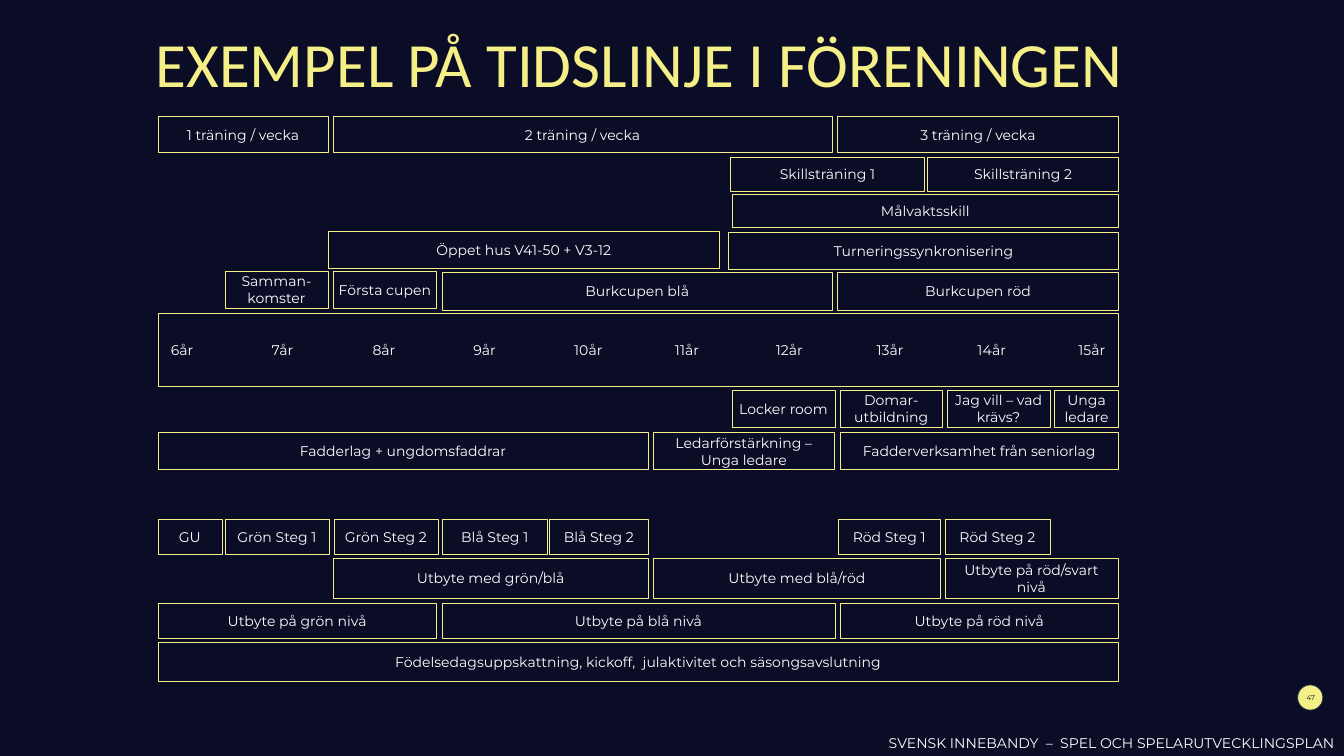
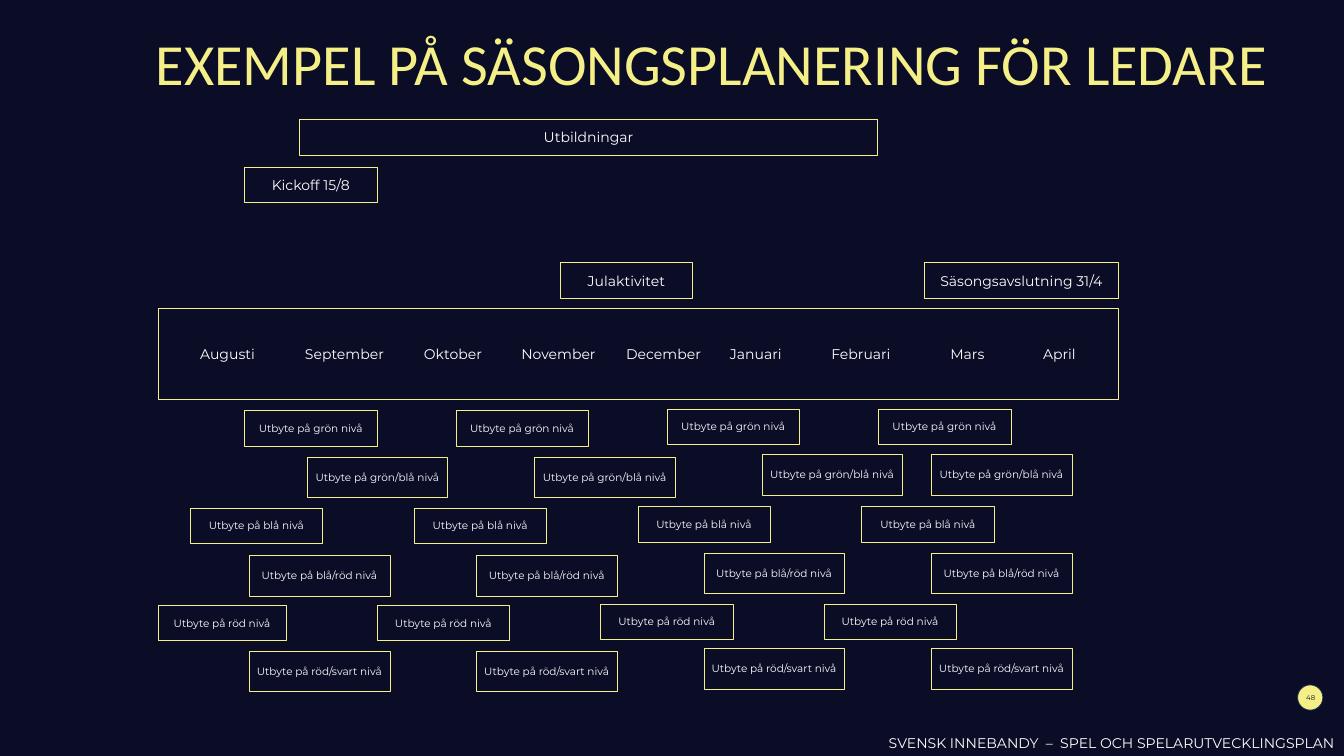
from typing import NamedTuple

from lxml.etree import SubElement
from pptx import Presentation
from pptx.dml.color import RGBColor
from pptx.enum.shapes import MSO_SHAPE as Preset
from pptx.enum.text import MSO_ANCHOR as Anchor, MSO_AUTO_SIZE as Fit, PP_ALIGN as Align
from pptx.oxml.ns import qn
from pptx.util import Inches, Pt

NAVY = RGBColor(0x0B, 0x0C, 0x26)
YELLOW = RGBColor(0xF5, 0xEF, 0x88)
WHITE = RGBColor(0xFF, 0xFF, 0xFF)
RING = RGBColor(0x1E, 0x32, 0x56)
BODY, HEAD = "Montserrat", "Calibri"
FOOTER = "SVENSK INNEBANDY  –  SPEL OCH SPELARUTVECKLINGSPLAN"

# Edges shared by both plans
LEFT, SPAN = 3.13, 19.06
LAST = 18.47  # leftmost edge allowed for the last box in a series


class Box(NamedTuple):
    text: str
    left: float
    width: float


class Row(NamedTuple):
    top: float
    height: float
    boxes: list[Box]


class Band(NamedTuple):
    """A framed line of labels; stops are measured from the first label."""
    top: float
    height: float
    inset: float
    labels: list[str]
    stops: list[float]


class Series(NamedTuple):
    """Four boxes at equal steps; the last two sit higher by rise."""
    level: str
    start: float
    step: float
    top: float
    rise: float
    width: float
    height: float


AGES = Band(6.22, 1.44, 0.26, [f"{age}år" for age in range(6, 16)],
            [2 * n for n in range(1, 10)])

MONTHS = Band(6.11, 1.82, 0.84,
              ["Augusti", "September", "Oktober", "November", "December",
               "Januari", "Februari", "Mars", "April"],
              [2.08, 4.44, 6.37, 8.45, 10.51, 12.52, 14.88, 16.72])

CLUB = [
    Row(2.31, 0.72, [
        Box("1 träning / vecka", LEFT, 3.38),
        Box("2 träning / vecka", 6.61, 9.89),
        Box("3 träning / vecka", 16.61, 5.58)]),
    Row(3.11, 0.69, [
        Box("Skillsträning 1", 14.49, 3.85),
        Box("Skillsträning 2", 18.4, 3.79)]),
    Row(3.86, 0.65, [Box("Målvaktsskill", 14.52, 7.67)]),
    Row(4.58, 0.74, [Box("Öppet hus V41-50 + V3-12", 6.52, 7.74)]),
    Row(4.61, 0.73, [Box("Turneringssynkronisering", 14.45, 7.74)]),
    Row(5.38, 0.74, [
        Box("Samman- komster", 4.46, 2.05),
        Box("Första cupen", 6.61, 2.05)]),
    Row(5.41, 0.74, [
        Box("Burkcupen blå", 8.77, 7.74),
        Box("Burkcupen röd", 16.61, 5.58)]),
    Row(7.74, 0.74, [
        Box("Locker room", 14.52, 2.04),
        Box("Domar-utbildning", 16.66, 2.04),
        Box("Jag vill – vad krävs?", 18.79, 2.04),
        Box("Unga ledare", 20.92, 1.27)]),
    Row(8.58, 0.74, [
        Box("Fadderlag + ungdomsfaddrar", LEFT, 9.73),
        Box("Ledarförstärkning – Unga ledare", 12.96, 3.59),
        Box("Fadderverksamhet från seniorlag", 16.66, 5.53)]),
    Row(10.3, 0.69, [
        Box("GU", LEFT, 1.27),
        Box("Grön Steg 1", 4.46, 2.07),
        Box("Grön Steg 2", 6.62, 2.07),
        Box("Blå Steg 1", 8.78, 2.07),
        Box("Blå Steg 2", 10.9, 1.96),
        Box("Röd Steg 1", 16.62, 2.04),
        Box("Röd Steg 2", 18.74, 2.09)]),
    Row(11.07, 0.8, [
        Box("Utbyte med grön/blå", 6.61, 6.25),
        Box("Utbyte med blå/röd", 12.96, 5.7),
        Box("Utbyte på röd/svart nivå", 18.74, 3.44)]),
    Row(11.96, 0.7, [
        Box("Utbyte på grön nivå", LEFT, 5.53),
        Box("Utbyte på blå nivå", 8.77, 7.79),
        Box("Utbyte på röd nivå", 16.66, 5.53)]),
    Row(12.75, 0.76, [
        Box("Födelsedagsuppskattning, kickoff,  julaktivitet och säsongsavslutning",
            LEFT, SPAN)]),
]

EVENTS = [
    Row(2.36, 0.71, [Box("Utbildningar", 5.94, 11.47)]),
    Row(3.31, 0.71, [Box("Kickoff 15/8", 4.85, 2.63)]),
    Row(5.21, 0.71, [
        Box("Julaktivitet", 11.11, 2.63),
        Box("Säsongsavslutning 31/4", 18.33, 3.86)]),
]

SWAPS = [
    Series("grön", 4.85, 4.19, 8.14, 0.03, 2.63, 0.71),
    Series("grön/blå", 6.09, 4.51, 9.07, 0.05, 2.79, 0.8),
    Series("blå", 3.77, 4.44, 10.08, 0.03, 2.63, 0.7),
    Series("blå/röd", 4.94, 4.51, 11.02, 0.05, 2.79, 0.8),
    Series("röd", 3.05, 4.43, 12.01, 0.03, 2.63, 0.7),
    Series("röd/svart", 4.94, 4.51, 12.92, 0.05, 2.79, 0.8),
]


def write(frame, text: str, size: float, color=WHITE, font=BODY,
          align=Align.CENTER, anchor=Anchor.MIDDLE):
    frame.word_wrap = True
    frame.vertical_anchor = anchor
    para = frame.paragraphs[0]
    para.alignment = align
    run = para.add_run()
    run.text = text
    run.font.size = Pt(size)
    run.font.name = font
    run.font.color.rgb = color
    return para


def place(left: float, top: float, width: float, height: float) -> tuple:
    return Inches(left), Inches(top), Inches(width), Inches(height)


def frame_box(slide, area: tuple, line: float):
    shape = slide.shapes.add_shape(Preset.RECTANGLE, *area)
    shape.shadow.inherit = False
    shape.fill.background()
    shape.line.color.rgb = YELLOW
    shape.line.width = Pt(line)
    return shape


def draw_rows(slide, rows: list[Row], line: float) -> None:
    for row in rows:
        for box in row.boxes:
            area = place(box.left, row.top, box.width, row.height)
            write(frame_box(slide, area, line).text_frame, box.text, 20)


def draw_band(slide, band: Band, line: float) -> None:
    shape = frame_box(slide, place(LEFT, band.top, SPAN, band.height), line)
    frame = shape.text_frame
    frame.margin_left = Inches(band.inset)
    para = write(frame, "\t".join(band.labels), 20, align=Align.LEFT)
    tabs = SubElement(para._p.get_or_add_pPr(), qn("a:tabLst"))
    for stop in band.stops:
        SubElement(tabs, qn("a:tab"), pos=str(Inches(stop)), algn="l")


def draw_swaps(slide, line: float) -> None:
    for row in SWAPS:
        for n in range(4):
            plan = row.start + n * row.step
            left = min(max(plan, LEFT), LAST)
            width = row.width - (left - plan if plan < LEFT else 0)
            area = place(left, row.top - row.rise * (n // 2), width, row.height)
            write(frame_box(slide, area, line).text_frame,
                  f"Utbyte på {row.level} nivå", 15)


def add_page(deck, title: str, size: float, number: int):
    """Add a slide with its title, page badge and footer."""
    slide = deck.slides.add_slide(deck.slide_layouts[5])
    head = slide.shapes.title
    head.left, head.top, head.width, head.height = place(2.99, 0.58, 23, 1.49)
    head.text_frame.auto_size = Fit.NONE
    para = write(head.text_frame, title, size, YELLOW, HEAD, Align.LEFT)
    para.line_spacing = 0.9

    badge = slide.shapes.add_shape(Preset.OVAL, *place(25.74, 13.59, 0.5, 0.5))
    badge.shadow.inherit = False
    badge.fill.solid()
    badge.fill.fore_color.rgb = YELLOW
    badge.line.color.rgb = RING
    badge.line.width = Pt(1)
    page = slide.shapes.add_textbox(*place(25.2, 13.45, 1.6, 0.8))
    write(page.text_frame, str(number), 10, NAVY)

    foot = slide.shapes.add_textbox(*place(17.53, 14.52, 9.49, 0.45))
    write(foot.text_frame, FOOTER, 20, align=Align.LEFT, anchor=Anchor.TOP)
    foot.text_frame.auto_size = Fit.SHAPE_TO_FIT_TEXT
    return slide


def main() -> None:
    deck = Presentation()
    deck.slide_width, deck.slide_height = Inches(26.66), Inches(15)
    back = deck.slide_master.background.fill
    back.solid()
    back.fore_color.rgb = NAVY

    club = add_page(deck, "EXEMPEL PÅ TIDSLINJE I FÖRENINGEN", 90, 47)
    draw_band(club, AGES, 0.6)
    draw_rows(club, CLUB, 0.6)

    season = add_page(deck, "EXEMPEL PÅ SÄSONGSPLANERING FÖR LEDARE", 83.2, 48)
    draw_band(season, MONTHS, 0.5)
    draw_swaps(season, 0.5)
    draw_rows(season, EVENTS, 0.5)

    deck.save("out.pptx")


if __name__ == "__main__":
    main()
